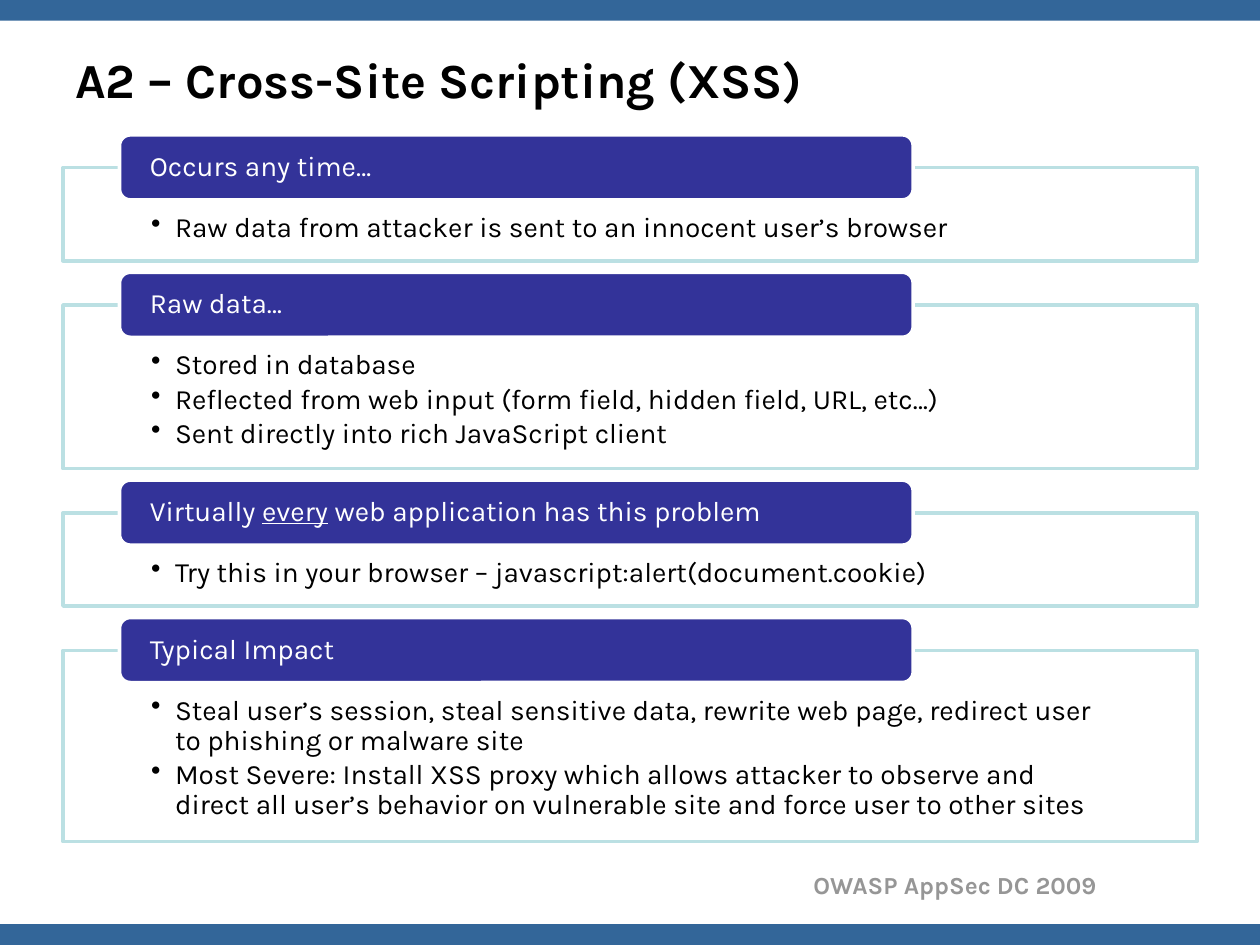
from dataclasses import dataclass

from lxml.etree import SubElement
from pptx import Presentation
from pptx.dml.color import RGBColor
from pptx.enum.shapes import MSO_SHAPE
from pptx.enum.text import MSO_ANCHOR, PP_ALIGN
from pptx.oxml.ns import qn
from pptx.util import Cm, Pt


@dataclass(frozen=True)
class Theme:
    """Colours, font and type sizes of the slide."""

    font: str = "Karla"
    bar: str = "336699"
    header: str = "333399"
    outline: str = "BBE0E3"
    light: str = "FFFFFF"
    dark: str = "000000"
    muted: str = "969696"
    title_size: int = 28
    body_size: int = 16
    footer_size: int = 14


THEME = Theme()
SLIDE_WIDTH, SLIDE_HEIGHT = 25.4, 19.05
BAR_HEIGHT = 0.42
PANEL_LEFT, PANEL_TOP, PANEL_WIDTH, PANEL_GAP = 1.27, 3.38, 22.86, 0.89
HEADER_LEFT, HEADER_WIDTH, HEADER_HEIGHT, HEADER_RISE = 2.41, 16, 1.31, 0.66

PANEL_FRAME = {
    "word_wrap": True, "vertical_anchor": MSO_ANCHOR.TOP,
    "margin_left": Cm(1.78), "margin_right": Cm(1.78),
    "margin_top": Cm(0.92), "margin_bottom": Cm(0.3),
}
HEADER_FRAME = {
    "word_wrap": True, "vertical_anchor": MSO_ANCHOR.MIDDLE,
    "margin_left": Cm(0.55), "margin_right": Cm(0.55),
    "margin_top": Cm(0), "margin_bottom": Cm(0),
}
TITLE_FRAME = {"word_wrap": True, "vertical_anchor": MSO_ANCHOR.MIDDLE}
FOOTER_FRAME = {"word_wrap": True, "vertical_anchor": MSO_ANCHOR.TOP}
BULLET_FORMAT = {"alignment": PP_ALIGN.LEFT, "level": 1,
                 "line_spacing": 0.9, "space_after": Pt(2.4)}
HEADER_FORMAT = {"alignment": PP_ALIGN.LEFT, "line_spacing": 0.9}

SECTIONS = [
    (1.88, [("Occurs any time…", False)],
     ["Raw data from attacker is sent to an innocent user’s browser"]),
    (3.3, [("Raw data…", False)],
     ["Stored in database",
      "Reflected from web input (form field, hidden field, URL, etc…)",
      "Sent directly into rich JavaScript client"]),
    (1.88, [("Virtually ", False), ("every", True),
            (" web application has this problem", False)],
     ["Try this in your browser – javascript:alert(document.cookie)"]),
    (3.86, [("Typical Impact", False)],
     ["Steal user’s session, steal sensitive data, rewrite web page, "
      "redirect user to phishing or malware site",
      "Most Severe: Install XSS proxy which allows attacker to observe and "
      "direct all user’s behavior on vulnerable site and force user to other sites"]),
]


def apply_format(target, values):
    """Set each named attribute on the target."""
    for name, value in values.items():
        setattr(target, name, value)


def add_words(paragraph, words, size, color, **font_values):
    """Add a run in the theme font."""
    run = paragraph.add_run()
    run.text = words
    apply_format(run.font, {"name": THEME.font, "size": Pt(size), **font_values})
    run.font.color.rgb = RGBColor.from_string(color)


def add_block(slide, preset, box, fill, outline=None):
    """Add a flat preset shape, outlined when a line colour is given."""
    block = slide.shapes.add_shape(preset, *map(Cm, box))
    block.shadow.inherit = False
    block.fill.solid()
    block.fill.fore_color.rgb = RGBColor.from_string(fill)
    if outline:
        block.line.color.rgb = RGBColor.from_string(outline)
        block.line.width = Pt(2)
    else:
        block.line.fill.background()
    return block


def add_label(slide, box, words, size, color, frame_format, alignment):
    """Add a bold single-paragraph text box."""
    frame = slide.shapes.add_textbox(*map(Cm, box)).text_frame
    apply_format(frame, frame_format)
    paragraph = frame.paragraphs[0]
    paragraph.alignment = alignment
    add_words(paragraph, words, size, color, bold=True)


def add_bullet(paragraph, words):
    """Fill a paragraph with a hanging bullet point."""
    properties = paragraph._p.get_or_add_pPr()
    properties.set("marL", str(Cm(0.48)))
    properties.set("indent", str(Cm(-0.48)))
    SubElement(properties, qn("a:buChar"), char="•")
    apply_format(paragraph, BULLET_FORMAT)
    add_words(paragraph, words, THEME.body_size, THEME.dark)


def add_panel(slide, top, height, points):
    """Add an outlined panel holding bullet points."""
    panel = add_block(slide, MSO_SHAPE.RECTANGLE,
                      (PANEL_LEFT, top, PANEL_WIDTH, height),
                      THEME.light, THEME.outline)
    fill_color = panel._element.spPr.find(qn("a:solidFill")).find(qn("a:srgbClr"))
    SubElement(fill_color, qn("a:alpha"), val="90000")
    frame = panel.text_frame
    apply_format(frame, PANEL_FRAME)
    for index, point in enumerate(points):
        add_bullet(frame.add_paragraph() if index else frame.paragraphs[0], point)


def add_header(slide, top, heading):
    """Add the rounded heading that overlaps a panel's top edge."""
    header = add_block(slide, MSO_SHAPE.ROUNDED_RECTANGLE,
                       (HEADER_LEFT, top, HEADER_WIDTH, HEADER_HEIGHT),
                       THEME.header, THEME.light)
    apply_format(header.text_frame, HEADER_FRAME)
    paragraph = header.text_frame.paragraphs[0]
    apply_format(paragraph, HEADER_FORMAT)
    for words, underlined in heading:
        add_words(paragraph, words, THEME.body_size, THEME.light,
                  underline=underlined)


def main():
    """Build and save the slide."""
    deck = Presentation()
    apply_format(deck, {"slide_width": Cm(SLIDE_WIDTH),
                        "slide_height": Cm(SLIDE_HEIGHT)})
    slide = deck.slides.add_slide(deck.slide_layouts[6])
    for bar_top in (0, SLIDE_HEIGHT - BAR_HEIGHT):
        add_block(slide, MSO_SHAPE.RECTANGLE,
                  (0, bar_top, SLIDE_WIDTH, BAR_HEIGHT), THEME.bar)
    add_label(slide, (13.77, 17.42, 8.59, 0.86), "OWASP AppSec DC 2009",
              THEME.footer_size, THEME.muted, FOOTER_FRAME, PP_ALIGN.RIGHT)
    add_label(slide, (1.27, 0.48, 22.86, 2.21), "A2 – Cross-Site Scripting (XSS)",
              THEME.title_size, THEME.dark, TITLE_FRAME, PP_ALIGN.LEFT)
    top = PANEL_TOP
    for height, heading, points in SECTIONS:
        add_panel(slide, top, height, points)
        add_header(slide, top - HEADER_RISE, heading)
        top += height + PANEL_GAP
    deck.save("out.pptx")


if __name__ == "__main__":
    main()
